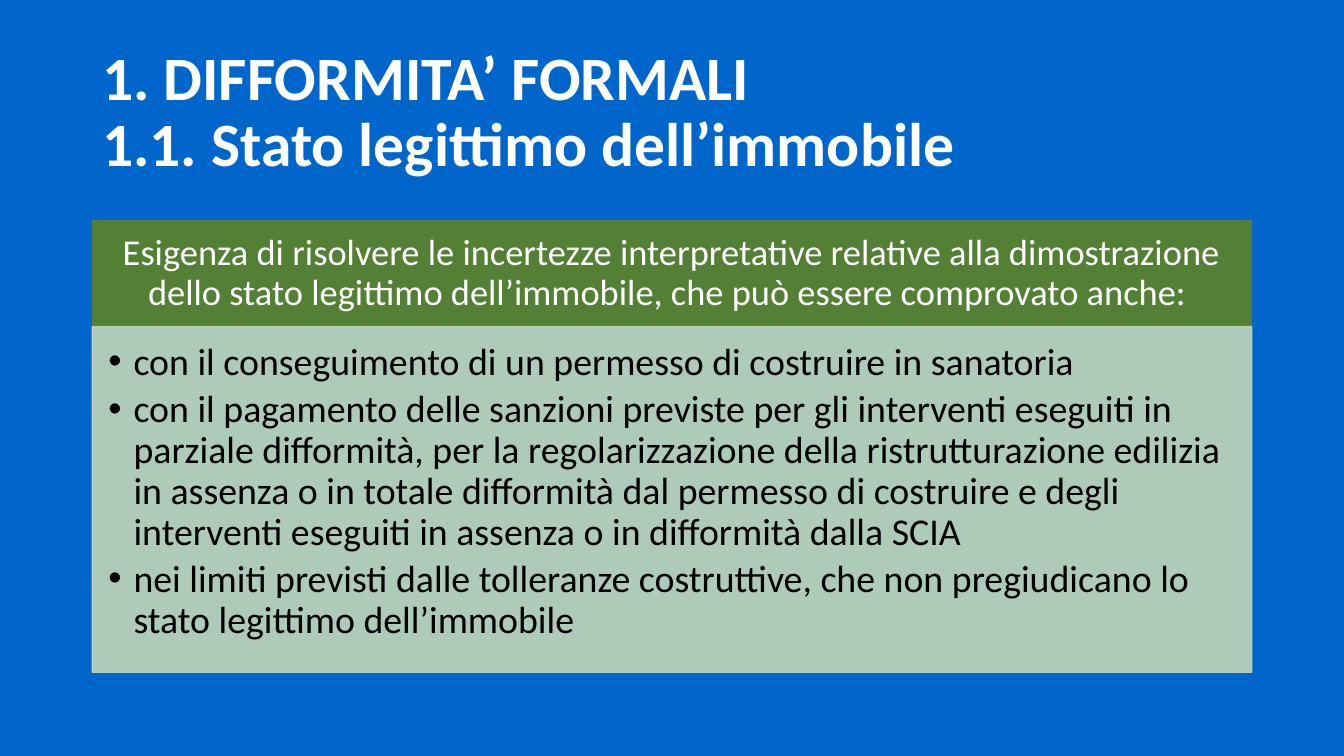
from lxml.etree import SubElement
from pptx import Presentation
from pptx.dml.color import RGBColor
from pptx.enum.shapes import MSO_SHAPE
from pptx.enum.text import MSO_ANCHOR, PP_ALIGN
from pptx.oxml.ns import qn
from pptx.util import Inches, Pt

TITLE = ["1. DIFFORMITA’ FORMALI ", "1.1. Stato legittimo dell’immobile"]
NEED = ("Esigenza di risolvere le incertezze interpretative relative alla dimostrazione "
        "dello stato legittimo dell’immobile, che può essere comprovato anche: ")
PROOFS = [
    "con il conseguimento di un permesso di costruire in sanatoria",
    "con il pagamento delle sanzioni previste per gli interventi eseguiti in parziale "
    "difformità, per la regolarizzazione della ristrutturazione edilizia in assenza o in "
    "totale difformità dal permesso di costruire e degli interventi eseguiti in assenza o "
    "in difformità dalla SCIA",
    "nei limiti previsti dalle tolleranze costruttive, che non pregiudicano lo stato "
    "legittimo dell’immobile",
]
BLUE, GREEN, PALE, WHITE, BLACK = "0066CC", "538035", "C2D7B9", "FFFFFF", "000000"
FONT = "Calibri"
WIDTH, HEIGHT = 13.33, 7.5
COLUMN = 11.5
LEFT = (WIDTH - COLUMN) / 2
TITLE_TOP, TITLE_HEIGHT = 0.4, 1.45
NEED_TOP, NEED_HEIGHT, PROOFS_HEIGHT = 2.19, 1.05, 3.43
BULLET_INDENT = 0.25


def rgb(color):
    return RGBColor.from_string(color)


def box(top, height):
    return [Inches(length) for length in (LEFT, top, COLUMN, height)]


def write(shape, paragraphs, size, color, insets, anchor, align=PP_ALIGN.LEFT, bold=False):
    frame = shape.text_frame
    frame.word_wrap = True
    frame.vertical_anchor = anchor
    frame.margin_left, frame.margin_top, frame.margin_right, frame.margin_bottom = map(Inches, insets)
    frame.text = "\n".join(paragraphs)
    for paragraph in frame.paragraphs:
        paragraph.alignment = align
        paragraph.line_spacing = 0.9
        for run in paragraph.runs:
            run.font.name, run.font.size, run.font.bold = FONT, Pt(size), bold
            run.font.color.rgb = rgb(color)


def panel(top, height, color, opacity=100):
    shape = slide.shapes.add_shape(MSO_SHAPE.RECTANGLE, *box(top, height))
    shape.shadow.inherit = False
    shape.fill.solid()
    shape.fill.fore_color.rgb = rgb(color)
    shape.line.color.rgb = rgb(color)
    shape.line.width = Pt(1)
    if opacity < 100:
        for paint in shape.fill._xPr.iter(qn("a:srgbClr")):
            SubElement(paint, qn("a:alpha"), val=str(opacity * 1000))
    return shape


def add_bullet(paragraph):
    paragraph.space_after = Pt(4.5)
    properties = paragraph._p.get_or_add_pPr()
    properties.set("marL", str(Inches(BULLET_INDENT)))
    properties.set("indent", str(-Inches(BULLET_INDENT)))
    SubElement(properties, qn("a:buFont"), typeface="Arial")
    SubElement(properties, qn("a:buChar"), char="•")


deck = Presentation()
deck.slide_width, deck.slide_height = Inches(WIDTH), Inches(HEIGHT)
slide = deck.slides.add_slide(deck.slide_layouts[6])
slide.background.fill.solid()
slide.background.fill.fore_color.rgb = rgb(BLUE)

title = slide.shapes.add_textbox(*box(TITLE_TOP, TITLE_HEIGHT))
write(title, ["\v".join(TITLE)], 44, WHITE, (0.1, 0.05, 0.1, 0.05), MSO_ANCHOR.MIDDLE, bold=True)

need = panel(NEED_TOP, NEED_HEIGHT, GREEN)
write(need, [NEED], 26, WHITE, (0.2, 0.12, 0.2, 0.12), MSO_ANCHOR.MIDDLE, PP_ALIGN.CENTER)

proofs = panel(NEED_TOP + NEED_HEIGHT, PROOFS_HEIGHT, PALE, opacity=90)
write(proofs, PROOFS, 27, BLACK, (0.16, 0.16, 0.21, 0.24), MSO_ANCHOR.TOP)
for proof in proofs.text_frame.paragraphs:
    add_bullet(proof)

deck.save("out.pptx")
